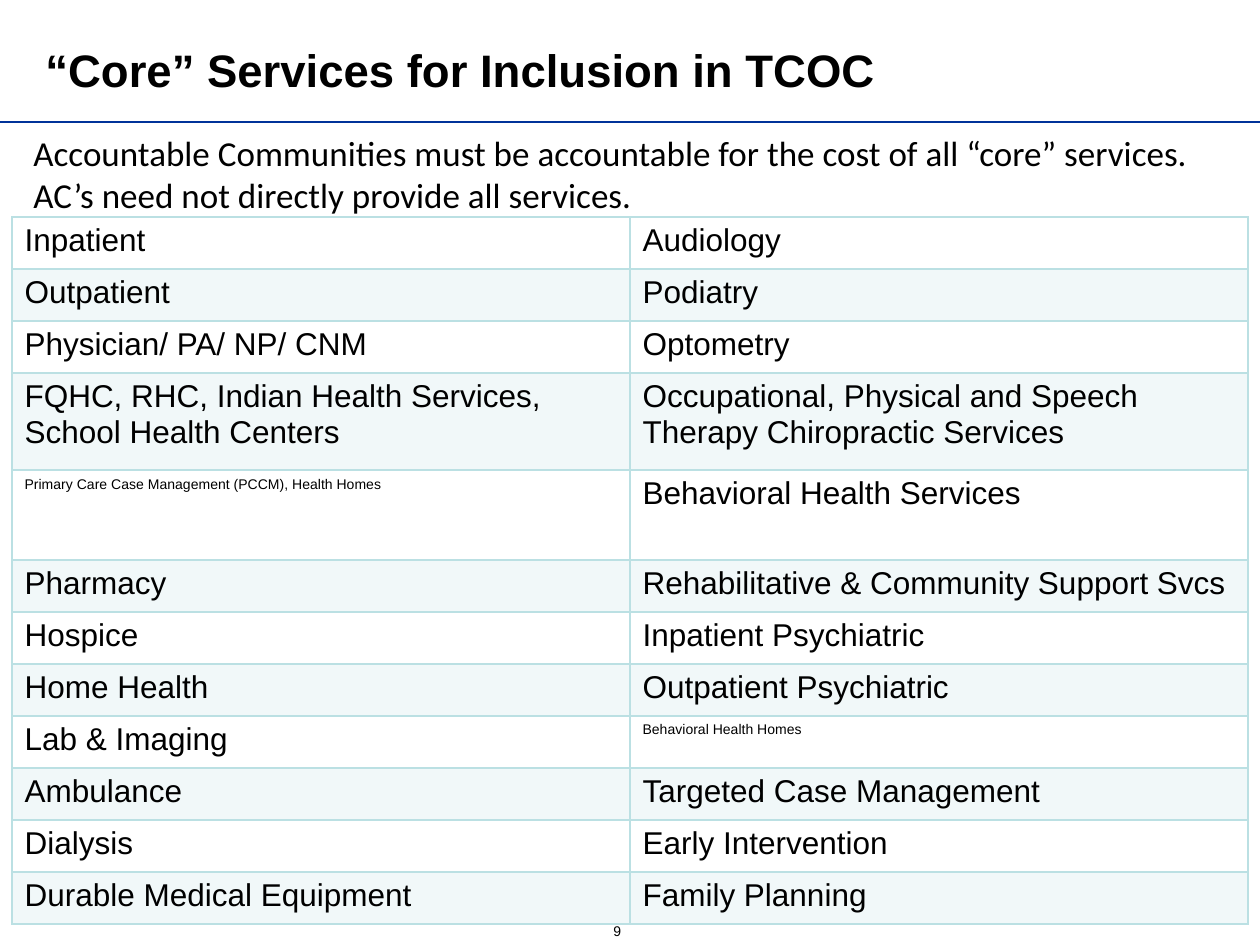
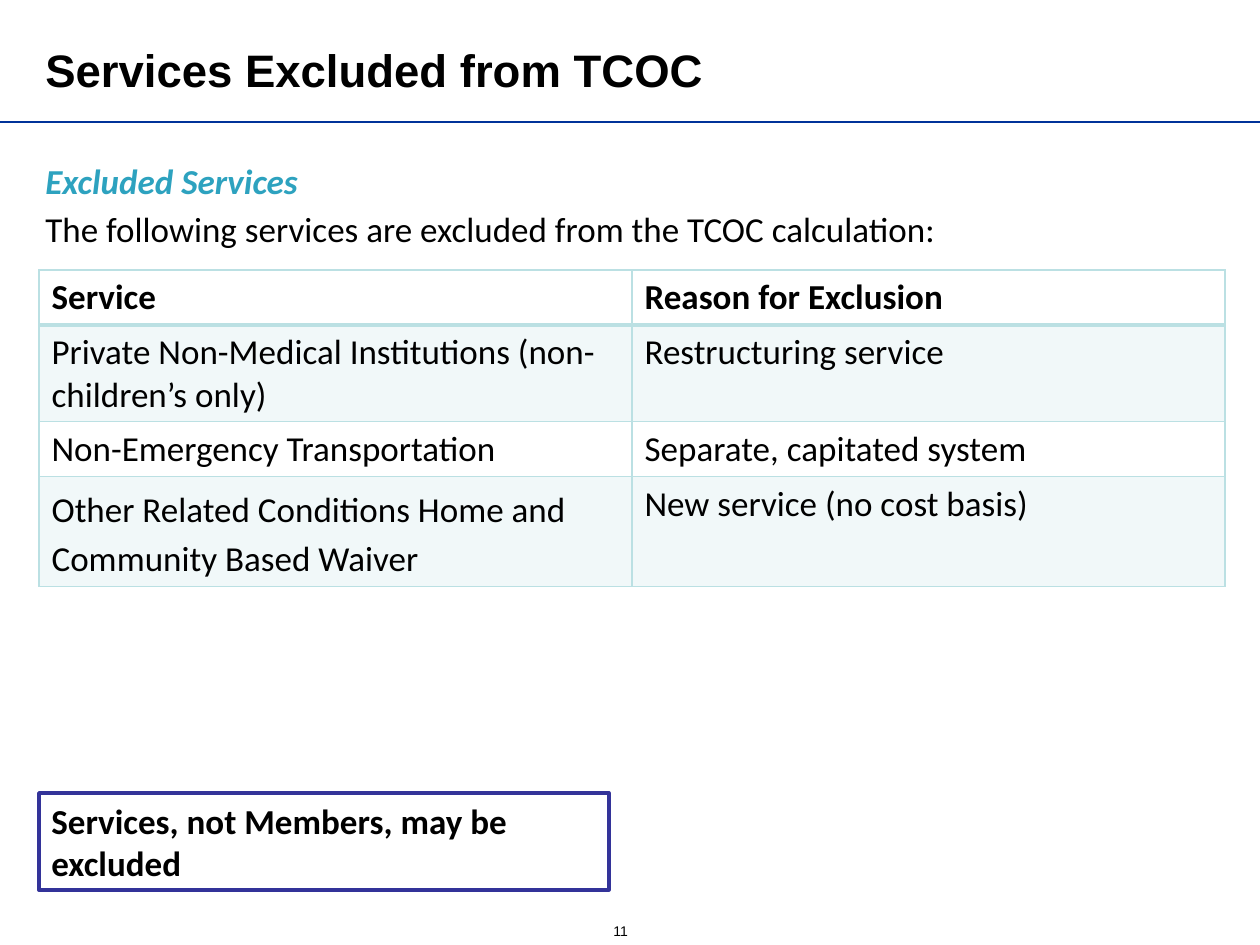
from dataclasses import dataclass

from lxml import etree
from pptx import Presentation
from pptx.dml.color import RGBColor
from pptx.enum import shapes, text
from pptx.oxml import ns
from pptx.util import Emu, Pt

CORE_TITLE = "“Core” Services for Inclusion in TCOC"
CORE_INTRO = (
    "Accountable Communities must be accountable for the cost of all “core” services. "
    "AC’s need not directly provide all services."
)
CORE_SERVICES = [
    ("Inpatient", "Audiology"),
    ("Outpatient", "Podiatry"),
    ("Physician/ PA/ NP/ CNM", "Optometry"),
    ("FQHC, RHC, Indian Health Services, School Health Centers",
     "Occupational, Physical and Speech Therapy Chiropractic Services"),
    ("Primary Care Case Management (PCCM), Health Homes", "Behavioral Health Services"),
    ("Pharmacy", "Rehabilitative & Community Support Svcs"),
    ("Hospice", "Inpatient Psychiatric"),
    ("Home Health", "Outpatient Psychiatric"),
    ("Lab & Imaging", "Behavioral Health Homes"),
    ("Ambulance", "Targeted Case Management"),
    ("Dialysis", "Early Intervention"),
    ("Durable Medical Equipment", "Family Planning"),
]
SMALL_PRINT = {"Primary Care Case Management (PCCM), Health Homes", "Behavioral Health Homes"}
CORE_ROW_HEIGHTS = [52] * 3 + [97, 90] + [52] * 7

EXCLUDED_TITLE = "Services Excluded from TCOC"
EXCLUDED_HEADING = "Excluded Services"
EXCLUDED_INTRO = "The following services are excluded from the TCOC calculation:"
EXCLUDED_SERVICES = [
    ("Service", "Reason for Exclusion"),
    ("Private Non-Medical Institutions (non- children’s only)", "Restructuring service"),
    ("Non-Emergency Transportation", "Separate, capitated system"),
    ("Other Related Conditions Home and Community Based Waiver", "New service (no cost basis)"),
]
LOOSE_SERVICE = EXCLUDED_SERVICES[-1][0]
EXCLUDED_ROW_HEIGHTS = [55, 96, 55, 110]
EXCLUDED_NOTE = "Services, not Members, may be excluded"


@dataclass(frozen=True)
class Theme:
    ink: str = "000000"
    paper: str = "FFFFFF"
    rule: str = "003399"
    accent: str = "2DA2BF"
    frame: str = "333399"
    table: str = "BBE0E3"
    band_alpha: int = 20
    heading_font: str = "Arial"
    body_font: str = "Calibri"
    title_size: int = 26
    body_size: int = 20
    cell_size: int = 18
    small_size: int = 8
    loose_spacing: float = 1.15


THEME = Theme()
SLIDE_WIDTH, SLIDE_HEIGHT = 1260, 945


def px(length):
    return Emu(round(length * 914400 / 126))


def color(code):
    return RGBColor.from_string(code)


def write(paragraph, words, size, font, ink=THEME.ink, bold=False, italic=False):
    run = paragraph.add_run()
    run.text = words
    run.font.size = Pt(size)
    run.font.name = font
    run.font.color.rgb = color(ink)
    run.font.bold = bold
    run.font.italic = italic


def add_text_box(slide, left, top, width, height, anchor=text.MSO_ANCHOR.TOP):
    frame = slide.shapes.add_textbox(px(left), px(top), px(width), px(height)).text_frame
    frame.word_wrap = True
    frame.vertical_anchor = anchor
    return frame


def add_base_slide(presentation, title, number):
    slide = presentation.slides.add_slide(presentation.slide_layouts[6])
    rule = slide.shapes.add_connector(
        shapes.MSO_CONNECTOR.STRAIGHT, 0, px(122), px(SLIDE_WIDTH), px(122))
    rule.line.color.rgb = color(THEME.rule)
    rule.line.width = Pt(1.5)
    etree.SubElement(rule._element.spPr, ns.qn("a:effectLst"))
    number_frame = add_text_box(slide, 601, 916, 43, 29)
    write(number_frame.paragraphs[0], number, THEME.small_size, THEME.heading_font)
    title_frame = add_text_box(slide, 33, 18, 992, 102, text.MSO_ANCHOR.MIDDLE)
    write(title_frame.paragraphs[0], title, THEME.title_size, THEME.heading_font, bold=True)
    return slide


def set_borders(cell, top, bottom):
    properties = cell._tc.get_or_add_tcPr()
    for side, points in (("L", 1), ("R", 1), ("T", top), ("B", bottom)):
        line = etree.SubElement(properties, ns.qn(f"a:ln{side}"), w=str(Pt(points)))
        fill = etree.SubElement(line, ns.qn("a:solidFill"))
        etree.SubElement(fill, ns.qn("a:srgbClr"), val=THEME.table)


def set_band(cell, shaded):
    if not shaded:
        cell.fill.background()
        return
    cell.fill.solid()
    cell.fill.fore_color.rgb = color(THEME.table)
    tint = cell._tc.tcPr.find(".//" + ns.qn("a:solidFill") + "[last()]")
    tint = cell._tc.tcPr.findall(ns.qn("a:solidFill"))[-1][0]
    etree.SubElement(tint, ns.qn("a:alpha"), val=str(THEME.band_alpha * 1000))


def add_service_table(slide, left, top, column_width, heights, rows, size, font, header=False):
    table = slide.shapes.add_table(
        len(rows), 2, px(left), px(top), px(2 * column_width), px(sum(heights))).table
    table.first_row = header
    table.horz_banding = False
    for column in table.columns:
        column.width = px(column_width)
    for index, (services, height) in enumerate(zip(rows, heights)):
        table.rows[index].height = px(height)
        top_line = 2 if header and index == 1 else 1
        bottom_line = 2 if header and index == 0 else 1
        for cell, service in zip(table.rows[index].cells, services):
            set_borders(cell, top_line, bottom_line)
            set_band(cell, index % 2 == 1)
            paragraph = cell.text_frame.paragraphs[0]
            if service == LOOSE_SERVICE:
                paragraph.line_spacing = THEME.loose_spacing
            cell_size = THEME.small_size if service in SMALL_PRINT else size
            write(paragraph, service, cell_size, font, bold=header and index == 0)


def add_core_slide(presentation):
    slide = add_base_slide(presentation, CORE_TITLE, "9")
    intro = add_text_box(slide, 21, 125, 1202, 100)
    write(intro.paragraphs[0], CORE_INTRO, THEME.body_size, THEME.body_font)
    add_service_table(slide, 12, 217, 618, CORE_ROW_HEIGHTS, CORE_SERVICES,
                      THEME.cell_size, THEME.heading_font)


def add_excluded_slide(presentation):
    slide = add_base_slide(presentation, EXCLUDED_TITLE, "11")
    intro = add_text_box(slide, 33, 147, 1186, 111)
    heading, sentence = intro.paragraphs[0], intro.add_paragraph()
    for paragraph in (heading, sentence):
        paragraph.line_spacing = THEME.loose_spacing
    write(heading, EXCLUDED_HEADING, THEME.body_size, THEME.body_font,
          THEME.accent, bold=True, italic=True)
    write(sentence, EXCLUDED_INTRO, THEME.body_size, THEME.body_font)

    note = slide.shapes.add_shape(
        shapes.MSO_SHAPE.RECTANGLE, px(39), px(793), px(570), px(97))
    note.shadow.inherit = False
    note.fill.solid()
    note.fill.fore_color.rgb = color(THEME.paper)
    note.line.color.rgb = color(THEME.frame)
    note.line.width = Pt(2)
    note.text_frame.word_wrap = True
    note.text_frame.vertical_anchor = text.MSO_ANCHOR.TOP
    paragraph = note.text_frame.paragraphs[0]
    paragraph.alignment = text.PP_ALIGN.LEFT
    write(paragraph, EXCLUDED_NOTE, THEME.body_size, THEME.body_font, bold=True)

    add_service_table(slide, 39, 270, 593, EXCLUDED_ROW_HEIGHTS, EXCLUDED_SERVICES,
                      THEME.body_size, THEME.body_font, header=True)


def main():
    presentation = Presentation()
    presentation.slide_width = px(SLIDE_WIDTH)
    presentation.slide_height = px(SLIDE_HEIGHT)
    add_core_slide(presentation)
    add_excluded_slide(presentation)
    presentation.save("out.pptx")


if __name__ == "__main__":
    main()
